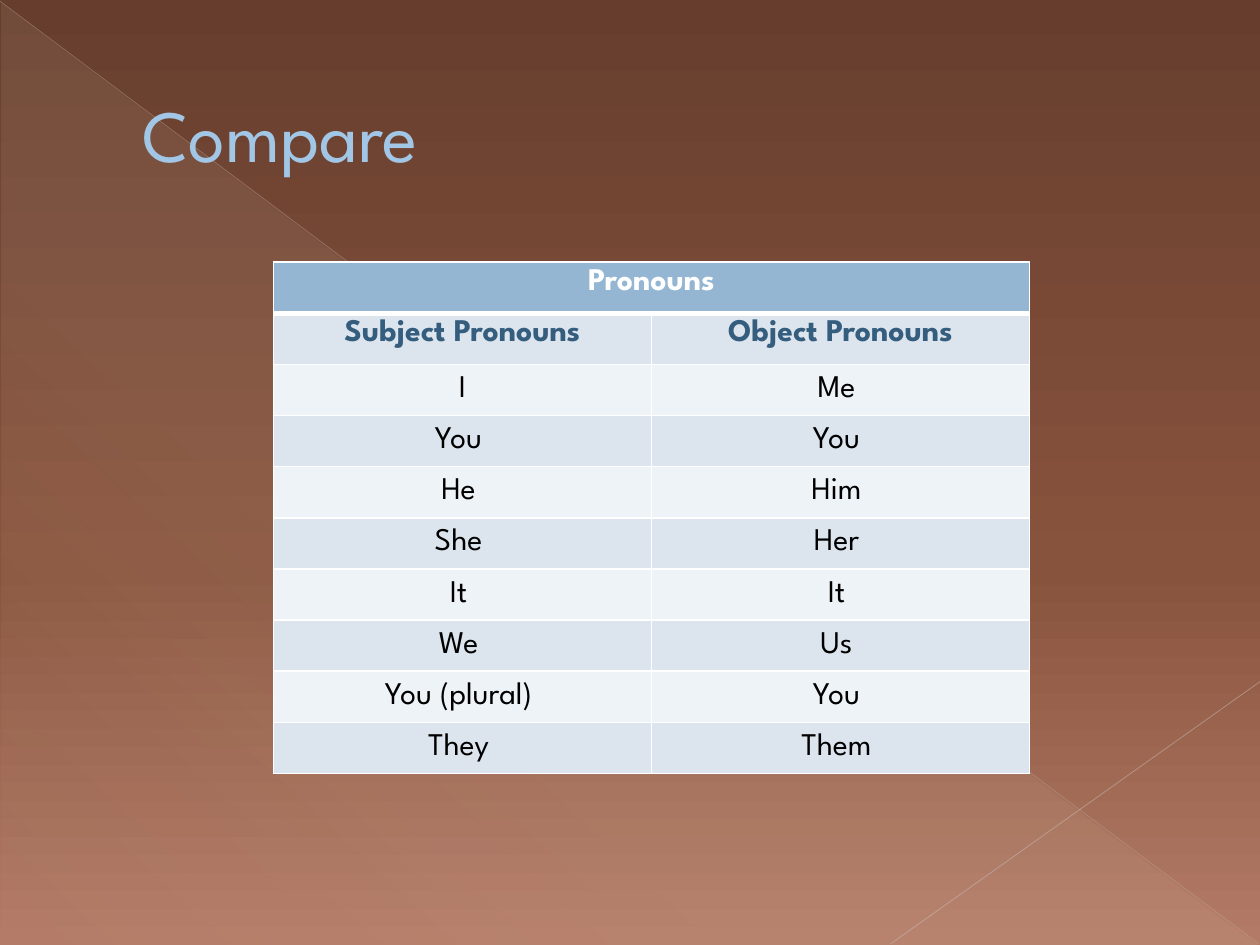
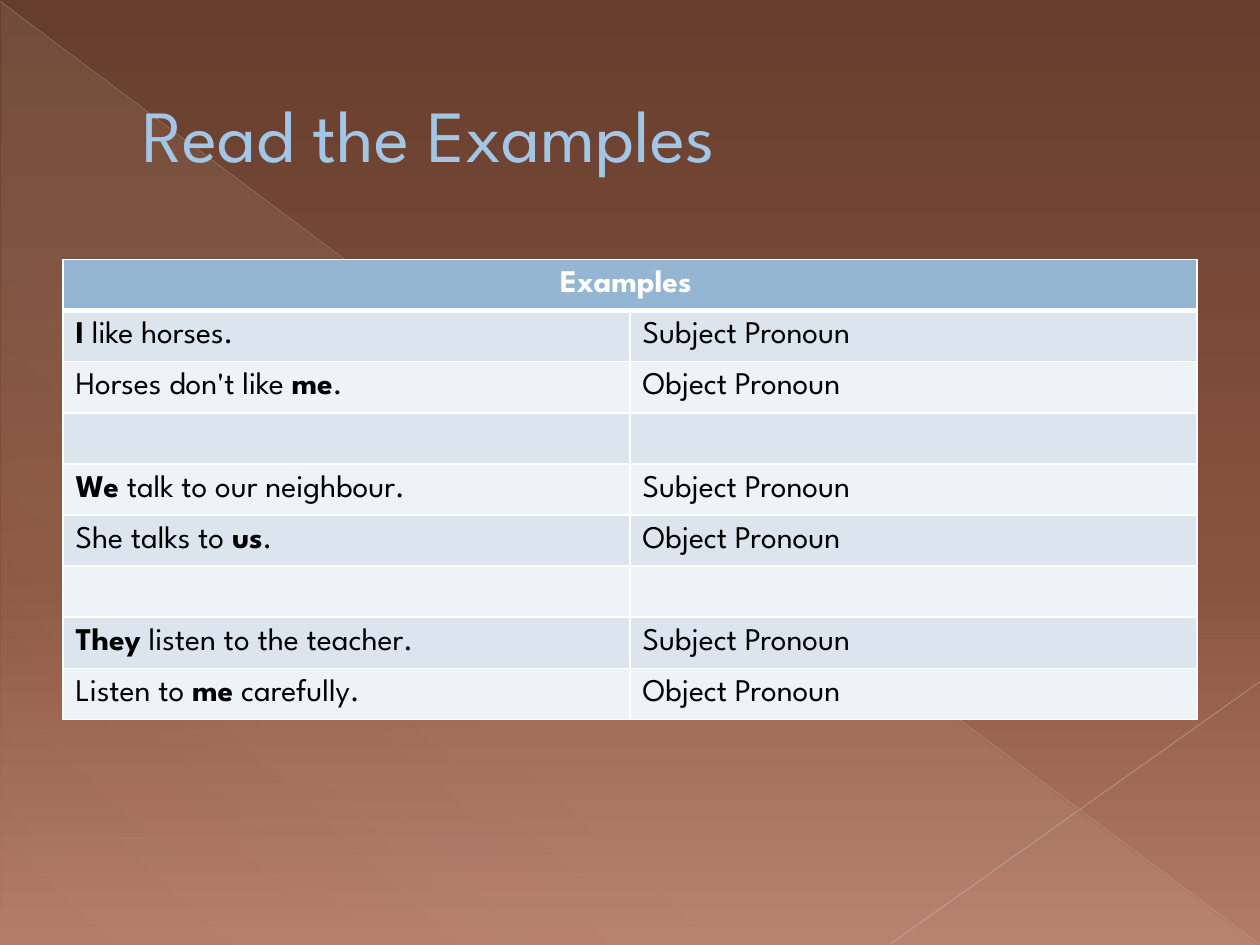
from lxml.etree import SubElement
from pptx import Presentation
from pptx.dml.color import RGBColor
from pptx.enum.shapes import MSO_CONNECTOR, MSO_SHAPE
from pptx.enum.text import MSO_ANCHOR, PP_ALIGN
from pptx.oxml.ns import qn
from pptx.util import Inches, Pt

FONT = "League Spartan"
WHITE = RGBColor(0xFF, 0xFF, 0xFF)
BLACK = RGBColor(0x00, 0x00, 0x00)
TITLE_BLUE = RGBColor(0xA1, 0xC6, 0xE6)
TITLE_OUTLINE = RGBColor(0x67, 0x7E, 0x91)
HEADER_BLUE = RGBColor(0x94, 0xB6, 0xD2)
SUBHEADER_BLUE = RGBColor(0x35, 0x5D, 0x7E)
BAND_DARK = RGBColor(0xDC, 0xE5, 0xEE)
BAND_LIGHT = RGBColor(0xEE, 0xF3, 0xF7)
BROWN_TOP = RGBColor(0x67, 0x3E, 0x2E)
BROWN_MIDDLE = RGBColor(0x88, 0x53, 0x3D)
BROWN_BOTTOM = RGBColor(0xB3, 0x7B, 0x67)
SAND = RGBColor(0xEB, 0xDD, 0xC3)
DIAGONAL_GREY = RGBColor(0xC8, 0xBC, 0xB8)
CORNER_GREY = RGBColor(0xCE, 0xC3, 0xBF)

BACKGROUND_STOPS = [(0, BROWN_TOP, 100), (60, BROWN_MIDDLE, 100), (100, BROWN_BOTTOM, 100)]
TRIANGLE_STOPS = [(0, SAND, 10), (70, SAND, 8), (100, SAND, 1)]

PRONOUNS = [
    ("I", "Me "), ("You ", "You "), ("He ", "Him "), ("She ", "Her "),
    ("It ", "It "), ("We ", "Us "), ("You (plural) ", "You "), ("They ", "Them "),
]
EXAMPLES = [
    ("*I* like horses.", "Subject Pronoun"),
    ("Horses don't like *me*.", "Object Pronoun"),
    ("", ""),
    ("*We* talk to our neighbour.", "Subject Pronoun"),
    ("She talks to *us*.", "Object Pronoun"),
    ("", ""),
    ("*They* listen to the teacher.", "Subject Pronoun"),
    ("Listen to *me* carefully.", "Object Pronoun"),
]


def add_color(parent, color, opacity=100):
    color_element = SubElement(parent, qn("a:srgbClr"), val=str(color))
    if opacity < 100:
        SubElement(color_element, qn("a:alpha"), val=str(opacity * 1000))


def set_gradient(fill, element, stops, clockwise_angle):
    fill.gradient()
    fill.gradient_angle = 360 - clockwise_angle
    stop_list = element.find(".//" + qn("a:gsLst"))
    for default_stop in list(stop_list):
        stop_list.remove(default_stop)
    for position, color, opacity in stops:
        stop = SubElement(stop_list, qn("a:gs"), pos=str(position * 1000))
        add_color(stop, color, opacity)


def add_thin_line(slide, start, end, color, width, opacity):
    points = [Inches(value) for value in (*start, *end)]
    line = slide.shapes.add_connector(MSO_CONNECTOR.STRAIGHT, *points)
    line.line.width = Pt(width)
    line.line.color.rgb = color
    properties = line._element.spPr
    color_element = properties.find(".//" + qn("a:srgbClr"))
    SubElement(color_element, qn("a:alpha"), val=str(opacity * 1000))
    SubElement(properties, qn("a:effectLst"))


def add_backdrop(slide):
    set_gradient(slide.background.fill, slide._element, BACKGROUND_STOPS, 90)
    triangle = slide.shapes.add_shape(
        MSO_SHAPE.RIGHT_TRIANGLE, Inches(0.01), Inches(0.02), Inches(9.98), Inches(7.48))
    triangle.shadow.inherit = False
    triangle.line.fill.background()
    set_gradient(triangle.fill, triangle._element, TRIANGLE_STOPS, 133)
    add_thin_line(slide, (0, 0.01), (9.99, 7.49), DIAGONAL_GREY, 0.39, 35)
    add_thin_line(slide, (10, 5.41), (7.07, 7.49), CORNER_GREY, 0.47, 45)


def set_font(paragraph, size, color):
    paragraph.font.name = FONT
    paragraph.font.size = Pt(size)
    paragraph.font.color.rgb = color


def add_title(slide, text):
    box = slide.shapes.add_textbox(Inches(0.5), Inches(0.29), Inches(9), Inches(1.53))
    frame = box.text_frame
    frame.word_wrap = True
    frame.vertical_anchor = MSO_ANCHOR.MIDDLE
    paragraph = frame.paragraphs[0]
    set_font(paragraph, 42, TITLE_BLUE)
    paragraph._p.get_or_add_pPr().set("marL", str(Inches(0.53)))
    run = paragraph.add_run()
    run.text = text
    outline = SubElement(run._r.get_or_add_rPr(), qn("a:ln"), w=str(Pt(0.5)))
    add_color(SubElement(outline, qn("a:solidFill")), TITLE_OUTLINE)


def set_borders(cell, top=1, bottom=1):
    properties = cell._tc.get_or_add_tcPr()
    for side, width in (("L", 1), ("R", 1), ("T", top), ("B", bottom)):
        border = SubElement(properties, qn("a:ln" + side), w=str(Pt(width)))
        add_color(SubElement(border, qn("a:solidFill")), WHITE)


def write_cell(cell, text, color, bold=False, alignment=None, anchor=MSO_ANCHOR.MIDDLE):
    cell.vertical_anchor = anchor
    paragraph = cell.text_frame.paragraphs[0]
    paragraph.alignment = alignment
    set_font(paragraph, 18, color)
    for index, part in enumerate(text.split("*")):
        if part:
            run = paragraph.add_run()
            run.text = part
            run.font.bold = bold or index % 2 == 1


def add_banded_table(slide, heading, rows, left, top, width, height):
    table = slide.shapes.add_table(
        len(rows) + 1, 2, Inches(left), Inches(top), Inches(width), Inches(height)).table
    table.first_row = False
    table.horz_banding = False
    for row_index in range(len(rows) + 1):
        for column_index in range(2):
            cell = table.cell(row_index, column_index)
            set_borders(cell, top=3 if row_index == 1 else 1, bottom=3 if row_index == 0 else 1)
            cell.fill.solid()
            band = BAND_DARK if row_index % 2 else BAND_LIGHT
            cell.fill.fore_color.rgb = band if row_index else HEADER_BLUE
    table.cell(0, 0).merge(table.cell(0, 1))
    write_cell(table.cell(0, 0), heading, WHITE, True, PP_ALIGN.CENTER)
    return table


def write_rows(table, rows, first_row, alignment=None):
    for row_index, texts in enumerate(rows, first_row):
        for column_index, text in enumerate(texts):
            write_cell(table.cell(row_index, column_index), text, BLACK, alignment=alignment)


def add_content_slide(presentation, title):
    slide = presentation.slides.add_slide(presentation.slide_layouts[6])
    add_backdrop(slide)
    add_title(slide, title)
    return slide


def add_compare_slide(presentation):
    slide = add_content_slide(presentation, "Compare")
    subheadings = ("Subject Pronouns", "Object Pronouns")
    table = add_banded_table(slide, "Pronouns", [subheadings, *PRONOUNS], 2.17, 2.08, 6, 4.06)
    table.cell(0, 0).vertical_anchor = MSO_ANCHOR.TOP
    for column_index, subheading in enumerate(subheadings):
        write_cell(table.cell(1, column_index), subheading, SUBHEADER_BLUE, True,
                   PP_ALIGN.CENTER, MSO_ANCHOR.TOP)
    write_rows(table, PRONOUNS, 2, PP_ALIGN.CENTER)


def add_examples_slide(presentation):
    slide = add_content_slide(presentation, "Read the Examples")
    table = add_banded_table(slide, "Examples ", EXAMPLES, 0.5, 2.06, 9, 3.65)
    write_rows(table, EXAMPLES, 1)


def main():
    presentation = Presentation()
    presentation.slide_width = Inches(10)
    presentation.slide_height = Inches(7.5)
    add_compare_slide(presentation)
    add_examples_slide(presentation)
    presentation.save("out.pptx")


if __name__ == "__main__":
    main()
